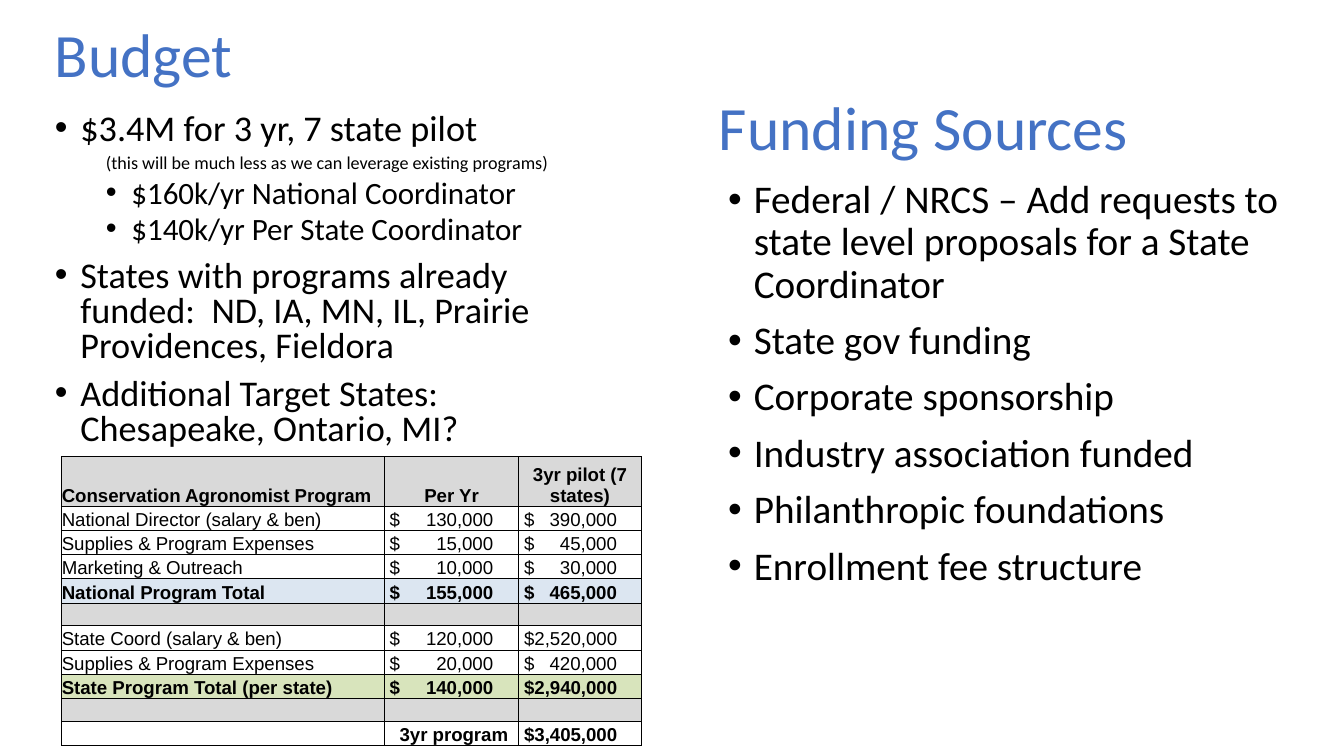
from dataclasses import dataclass

from lxml import etree
from pptx import Presentation
from pptx import util as u
from pptx.dml.color import RGBColor
from pptx.enum import text
from pptx.oxml import ns


@dataclass(frozen=True)
class Theme:
    body_font: str = "Calibri"
    table_font: str = "Arial"
    accent: str = "4472C4"
    ink: str = "000000"
    grey: str = "D9D9D9"
    blue: str = "DCE6F1"
    green: str = "D8E4BC"
    title: float = 33
    source: float = 21
    item: float = 19.4
    subitem: float = 16.6
    note: float = 9.7
    table: float = 10
    border: float = 0.5


THEME = Theme()
WIDTH = u.Inches(10)
HEIGHT = WIDTH * 9 // 16
INDENT = 0.19

# kind: (type size, left margin in indents, bulleted, space before)
LEVELS = {
    "source": (THEME.source, 1, True, 7.5),
    "item": (THEME.item, 1, True, 7.5),
    "note": (THEME.note, 2, False, 3.8),
    "subitem": (THEME.subitem, 3, True, 3.8),
}

BUDGET = [
    ("item", "$3.4M for 3 yr, 7 state pilot"),
    ("note", "(this will be much less as we can leverage existing programs)"),
    ("subitem", "$160k/yr National Coordinator"),
    ("subitem", "$140k/yr Per State Coordinator"),
    ("item", "States with programs already funded:  ND, IA, MN, IL, "
             "Prairie Providences, Fieldora"),
    ("item", "Additional Target States: Chesapeake, Ontario, MI?"),
]
SOURCES = [("source", line) for line in (
    "Federal / NRCS – Add requests to state level proposals for a State Coordinator",
    "State gov funding",
    "Corporate sponsorship",
    "Industry association funded",
    "Philanthropic foundations",
    "Enrollment fee structure",
)]

COLUMNS = (2.4, 1, 0.91)
MONEY_TABS = {1: 0.77, 2: 0.69}
ROW_HEIGHTS = {"head": 0.37, "gap": 0.17}
LINE_HEIGHT = 0.18
ROW_FILLS = {"head": THEME.grey, "gap": THEME.grey,
             "national": THEME.blue, "state": THEME.green}
BOLD_ROWS = ("head", "national", "state", "grand")
ROWS = [
    ("head", "Conservation Agronomist Program", "Per Yr", "3yr pilot (7 states)"),
    ("line", "National Director (salary & ben)", "$\t130,000", "$\t390,000"),
    ("line", "Supplies & Program Expenses", "$\t15,000", "$\t45,000"),
    ("line", "Marketing & Outreach", "$\t10,000", "$\t30,000"),
    ("national", "National Program Total", "$\t155,000", "$\t465,000"),
    ("gap", "", "", ""),
    ("line", "State Coord (salary & ben)", "$\t120,000", "$2,520,000"),
    ("line", "Supplies & Program Expenses", "$\t20,000", "$\t420,000"),
    ("state", "State Program Total (per state)", "$\t140,000", "$2,940,000"),
    ("gap", "", "", ""),
    ("grand", "", "3yr program", "$3,405,000"),
]


def place(left, top, width, height):
    """Turn percentages of the slide into lengths."""
    return [int(share * size / 100) for share, size in
            zip((left, top, width, height), (WIDTH, HEIGHT) * 2)]


def apply(target, values):
    for name, value in values.items():
        setattr(target, name, value)


def add_run(p, words, size, font=THEME.body_font, color=THEME.ink, bold=False):
    r = p.add_run()
    r.text = words
    apply(r.font, {"size": u.Pt(size), "name": font, "bold": bold})
    r.font.color.rgb = RGBColor.from_string(color)


def add_frame(s, area, **values):
    tf = s.shapes.add_textbox(*place(*area)).text_frame
    apply(tf, {"word_wrap": True, **values})
    return tf


def add_title(s, area, words):
    tf = add_frame(s, area, vertical_anchor=text.MSO_ANCHOR.MIDDLE)
    p = tf.paragraphs[0]
    p.line_spacing = 0.9
    add_run(p, words, THEME.title, color=THEME.accent)


def add_list(s, area, items, spacing, **values):
    tf = add_frame(s, area, **values)
    for i, (kind, words) in enumerate(items):
        size, steps, bulleted, before = LEVELS[kind]
        p = tf.add_paragraph() if i else tf.paragraphs[0]
        p.line_spacing = spacing
        if i:
            p.space_before = u.Pt(before)
        pPr = p._p.get_or_add_pPr()
        pPr.set("marL", str(u.Inches(INDENT * steps)))
        if bulleted:
            pPr.set("indent", str(-u.Inches(INDENT)))
            etree.SubElement(pPr, ns.qn("a:buFont"), typeface="Arial")
            etree.SubElement(pPr, ns.qn("a:buChar"), char="•")
        add_run(p, words, size)


def add_borders(cell):
    tcPr = cell._tc.get_or_add_tcPr()
    for side in ("a:lnL", "a:lnR", "a:lnT", "a:lnB"):
        ln = etree.SubElement(tcPr, ns.qn(side), w=str(u.Pt(THEME.border)))
        fill = etree.SubElement(ln, ns.qn("a:solidFill"))
        etree.SubElement(fill, ns.qn("a:srgbClr"), val=THEME.ink)


def add_right_tab(p, inches):
    tabs = etree.SubElement(p._p.get_or_add_pPr(), ns.qn("a:tabLst"))
    etree.SubElement(tabs, ns.qn("a:tab"), pos=str(u.Inches(inches)), algn="r")


def fill_cell(cell, kind, col, words):
    apply(cell, {"margin_left": 0, "margin_right": 0, "margin_top": 0,
                 "margin_bottom": 0, "vertical_anchor": text.MSO_ANCHOR.BOTTOM})
    add_borders(cell)
    if kind in ROW_FILLS:
        cell.fill.solid()
        cell.fill.fore_color.rgb = RGBColor.from_string(ROW_FILLS[kind])
    else:
        cell.fill.background()

    p = cell.text_frame.paragraphs[0]
    if not words:
        etree.SubElement(p._p, ns.qn("a:endParaRPr"), sz=str(THEME.table * 100))
        return
    if col and kind == "head":
        p.alignment = text.PP_ALIGN.CENTER
    elif words.startswith("$"):
        cell.margin_left = u.Inches(0.04)
        if "\t" in words:
            add_right_tab(p, MONEY_TABS[col])
    elif col:
        p.alignment = text.PP_ALIGN.RIGHT
        cell.margin_right = u.Inches(0.08)
    add_run(p, words, THEME.table, THEME.table_font, bold=kind in BOLD_ROWS)


def add_budget_table(s, area):
    table = s.shapes.add_table(len(ROWS), len(COLUMNS), *place(*area)).table
    apply(table, {"first_row": False, "horz_banding": False})
    for column, width in zip(table.columns, COLUMNS):
        column.width = u.Inches(width)
    for row, (kind, *values) in zip(table.rows, ROWS):
        row.height = u.Inches(ROW_HEIGHTS.get(kind, LINE_HEIGHT))
        for col, words in enumerate(values):
            fill_cell(row.cells[col], kind, col, words)


def main():
    prs = Presentation()
    apply(prs, {"slide_width": WIDTH, "slide_height": HEIGHT})
    s = prs.slides.add_slide(prs.slide_layouts[6])
    add_title(s, (3.1, -0.7, 40.7, 16.7), "Budget")
    add_list(s, (53.2, 22.9, 43.1, 63.5), SOURCES, 0.9)
    add_title(s, (52.5, 7.6, 44.6, 19.4), "Funding Sources")
    add_list(s, (3.1, 14.2, 44.6, 47.8), BUDGET, 0.8, margin_right=u.Inches(0.5))
    add_budget_table(s, (4.6, 60.4, 43.1, 38.6))
    prs.save("out.pptx")


if __name__ == "__main__":
    main()
